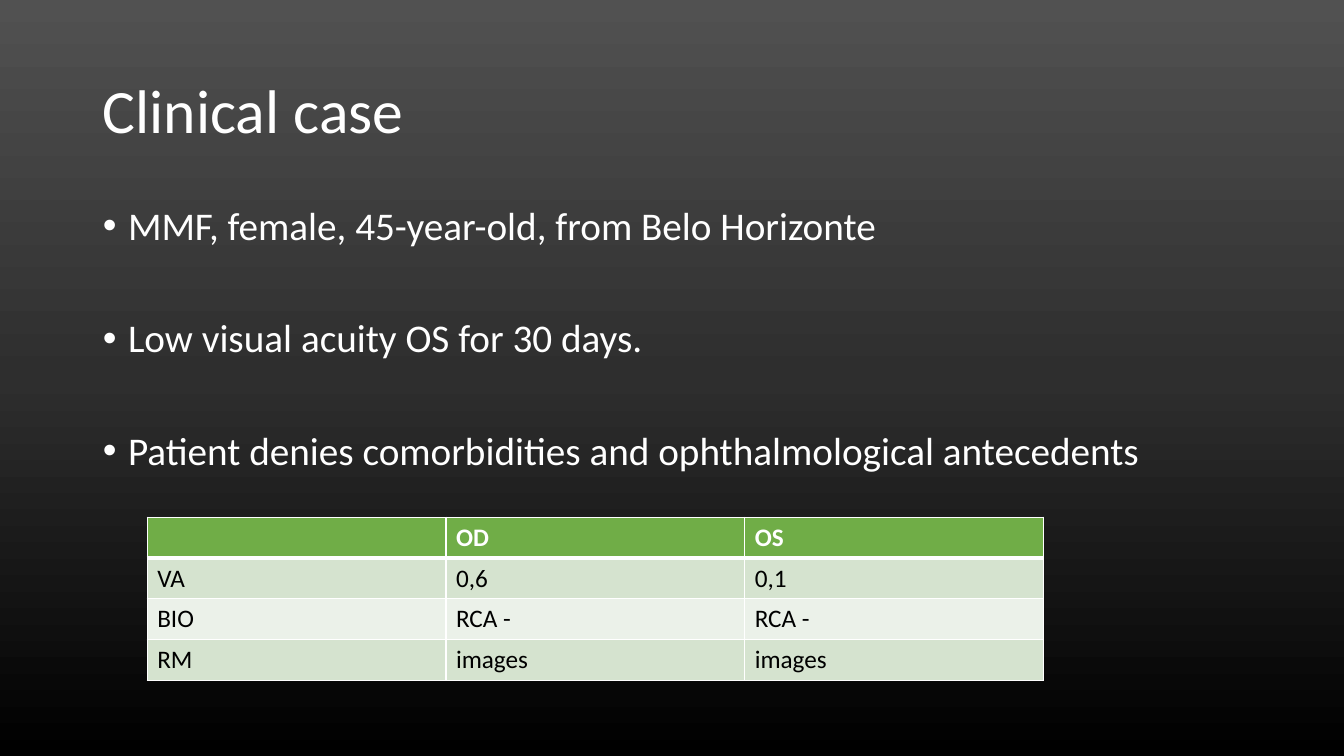
from copy import deepcopy
from dataclasses import dataclass

from lxml.etree import SubElement
from pptx import Presentation
from pptx.dml.color import RGBColor
from pptx.enum.text import MSO_ANCHOR, MSO_AUTO_SIZE, PP_ALIGN
from pptx.oxml.ns import qn
from pptx.util import Inches, Pt


@dataclass(frozen=True)
class Theme:
    font: str = "Calibri"
    light: str = "FFFFFF"
    dark: str = "000000"
    header: str = "70AD47"
    bands: tuple = ("D5E3CF", "EBF1E9")
    backdrop: tuple = ((0, "515151"), (0.5, "2E2E2E"), (1, "000000"))
    title_size: int = 44
    body_size: int = 28
    table_size: int = 18
    line_spacing: float = 0.9
    thin: int = 1
    thick: int = 3


class CaseSlide:
    def __init__(self, deck, theme):
        self.theme = theme
        self.page = deck.slides.add_slide(deck.slide_layouts[1])

    def style(self, para, size, color, bold=False):
        for span in para.runs:
            span.font.name = self.theme.font
            span.font.size = Pt(size)
            span.font.bold = bold
            span.font.color.rgb = RGBColor.from_string(color)

    def backdrop(self):
        fill = self.page.background.fill
        fill.gradient()
        fill.gradient_angle = 270
        stop_list = self.page.element.find(".//" + qn("a:gsLst"))
        stop_list.append(deepcopy(stop_list[-1]))
        for stop, (position, color) in zip(fill.gradient_stops, self.theme.backdrop):
            stop.position = position
            stop.color.rgb = RGBColor.from_string(color)

    def place(self, box, left, top, width, height):
        box.left, box.top = Inches(left), Inches(top)
        box.width, box.height = Inches(width), Inches(height)
        box.text_frame.word_wrap = True
        box.text_frame.auto_size = MSO_AUTO_SIZE.NONE

    def title(self, text, *area):
        box = self.page.shapes.title
        self.place(box, *area)
        box.text_frame.text = text
        box.text_frame.vertical_anchor = MSO_ANCHOR.MIDDLE
        para = box.text_frame.paragraphs[0]
        para.alignment = PP_ALIGN.LEFT
        para.line_spacing = self.theme.line_spacing
        self.style(para, self.theme.title_size, self.theme.light)

    def bullets(self, lines, *area):
        box = self.page.placeholders[1]
        self.place(box, *area)
        box.text_frame.text = "\n".join(lines)
        for index, para in enumerate(box.text_frame.paragraphs):
            para.line_spacing = self.theme.line_spacing
            para.space_before = Pt(50 if index else 10)
            properties = para._p.get_or_add_pPr()
            properties.set("marL", str(Inches(0.25)))
            properties.set("indent", str(Inches(-0.25)))
            SubElement(properties, qn("a:buChar"), char="•")
            self.style(para, self.theme.body_size, self.theme.light)

    def borders(self, cell, top, bottom):
        """Draw the four edges; they must come before the fill in the XML."""
        properties = cell._tc.get_or_add_tcPr()
        widths = {"L": self.theme.thin, "R": self.theme.thin, "T": top, "B": bottom}
        for index, (side, width) in enumerate(widths.items()):
            line = SubElement(properties, qn(f"a:ln{side}"), w=str(Pt(width)))
            paint = SubElement(line, qn("a:solidFill"))
            SubElement(paint, qn("a:srgbClr"), val=self.theme.light)
            properties.insert(index, line)

    def table(self, rows, left, top, width, height):
        theme = self.theme
        frame = self.page.shapes.add_table(
            len(rows), len(rows[0]),
            Inches(left), Inches(top), Inches(width), Inches(height))
        for r, row in enumerate(rows):
            is_header = r == 0
            fill = theme.header if is_header else theme.bands[(r - 1) % 2]
            for c, text in enumerate(row):
                cell = frame.table.cell(r, c)
                cell.text_frame.text = text
                cell.fill.solid()
                cell.fill.fore_color.rgb = RGBColor.from_string(fill)
                self.borders(cell,
                             top=theme.thick if r == 1 else theme.thin,
                             bottom=theme.thick if is_header else theme.thin)
                self.style(cell.text_frame.paragraphs[0], theme.table_size,
                           theme.light if is_header else theme.dark, is_header)


def main():
    deck = Presentation()
    deck.slide_width, deck.slide_height = Inches(13.33), Inches(7.5)
    case = CaseSlide(deck, Theme())
    case.backdrop()
    case.title("Clinical case", 0.92, 0.4, 11.5, 1.45)
    case.bullets([
        "MMF, female, 45-year-old, from Belo Horizonte",
        "Low visual acuity OS for 30 days.",
        "Patient denies comorbidities and ophthalmological antecedents",
    ], 0.92, 2, 11.5, 4.76)
    case.table([
        ["", "OD", "OS"],
        ["VA", "0,6", "0,1"],
        ["BIO", "RCA -", "RCA -"],
        ["RM", "images", "images"],
    ], 1.46, 5.13, 8.89, 1.62)
    deck.save("out.pptx")


if __name__ == "__main__":
    main()
